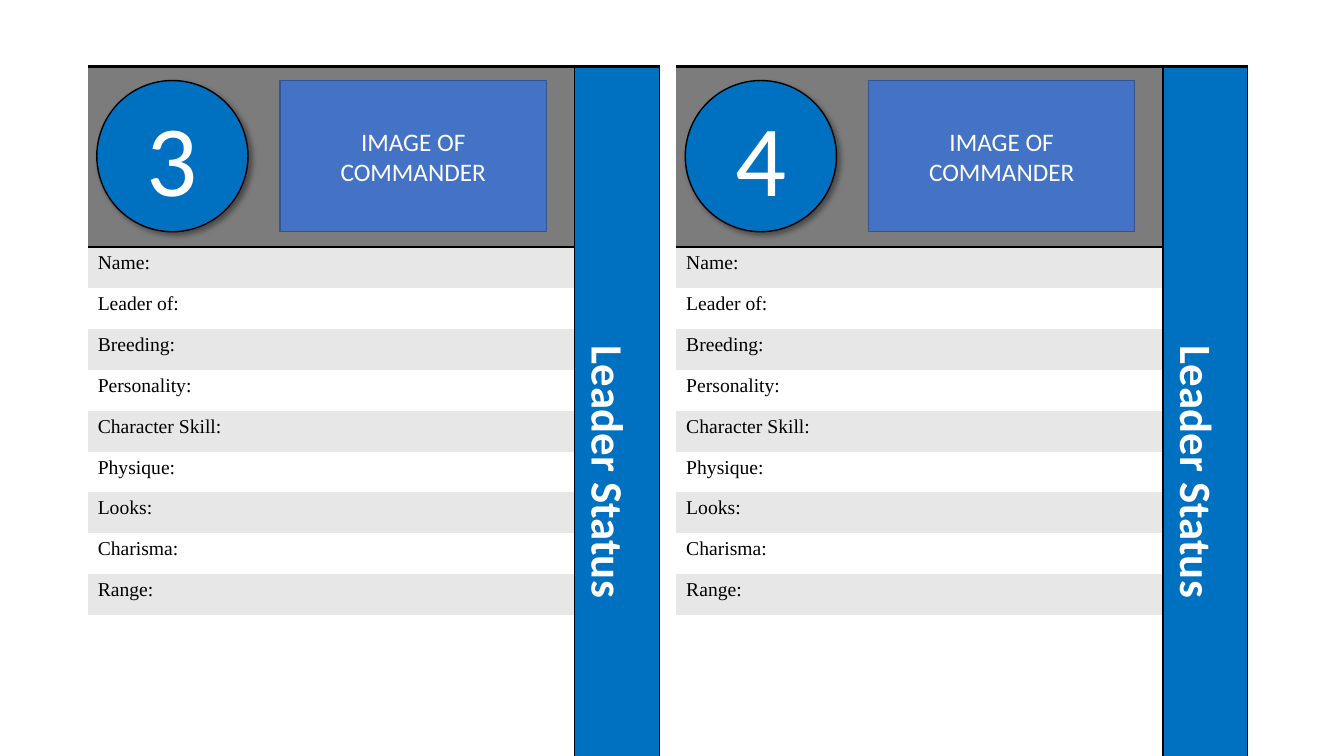
from lxml.etree import SubElement
from pptx import Presentation
from pptx.dml.color import RGBColor
from pptx.enum.shapes import MSO_SHAPE as SHAPE
from pptx.enum.text import MSO_ANCHOR as ANCHOR, PP_ALIGN as ALIGN
from pptx.oxml.ns import qn
from pptx.util import Cm, Pt

COLORS = {
    "black": "000000", "white": "FFFFFF", "band": "E7E7E7", "header": "7C7C7C",
    "status": "0070C0", "image": "4472C4", "image_line": "325491",
}
TRAITS = ["Name:", "Leader of:", "Breeding:", "Personality:", "Character Skill:",
          "Physique:", "Looks:", "Charisma:", "Range:"]
LAST_ROW = len(TRAITS) + 1
COL_WIDTHS = [4.19, 8.08, 2.13]
HEADER_HEIGHT, ROW_HEIGHT = 4.55, 1.03
CARD_LEFT, CARD_TOP, CARD_PITCH = 2.21, 1.68, 14.83
BADGE_TOP, BADGE_SIZE = 2.03, 3.81
NO_STYLE = "{2D5ABB26-0587-4C30-8999-92F81FD0307C}"

TRAIT_FONT = {"name": "Times New Roman", "size": Pt(14), "bold": False}
STATUS_FONT = {"name": "Calibri", "size": Pt(32), "bold": True}
NUMBER_FONT = {"name": "Calibri", "size": Pt(72)}
IMAGE_FONT = {"name": "Calibri", "size": Pt(18)}


def rgb(name):
    return RGBColor.from_string(COLORS[name])


def paint(item, color):
    item.fill.solid()
    item.fill.fore_color.rgb = rgb(color)


def write(tf, text, font, color, align=ALIGN.LEFT):
    p = tf.paragraphs[0]
    p.alignment = align
    r = p.add_run()
    r.text = text
    for key, value in font.items():
        setattr(r.font, key, value)
    r.font.color.rgb = rgb(color)


def add_border(cell, side, points):
    ln = SubElement(cell._tc.get_or_add_tcPr(), qn(f"a:ln{side}"), w=str(Pt(points)))
    fill = SubElement(ln, qn("a:solidFill"))
    SubElement(fill, qn("a:srgbClr"), val=COLORS["black"])


def frame_cell(cell, row, col):
    """Rule the card's top, its header, its foot and the edge of the status bar."""
    if col == 2:
        add_border(cell, "L", 1)
    if col == 1:
        add_border(cell, "R", 1)
    if row == 0:
        add_border(cell, "T", 2)
    if row == LAST_ROW or (row == 0 and col < 2):
        add_border(cell, "B", 2)


def cell_color(row, col):
    if col == 2:
        return "status"
    if row == 0:
        return "header"
    return "band" if row % 2 and row < LAST_ROW else "white"


def add_card_table(s, left):
    height = HEADER_HEIGHT + LAST_ROW * ROW_HEIGHT
    frame = s.shapes.add_table(LAST_ROW + 1, len(COL_WIDTHS), Cm(left), Cm(CARD_TOP),
                               Cm(sum(COL_WIDTHS)), Cm(height))
    table = frame.table
    table.first_row = table.horz_banding = False
    table._tbl.tblPr.find(qn("a:tableStyleId")).text = NO_STYLE
    for column, width in zip(table.columns, COL_WIDTHS):
        column.width = Cm(width)
    for i, row in enumerate(table.rows):
        row.height = Cm(ROW_HEIGHT if i else HEADER_HEIGHT)
        for j, cell in enumerate(row.cells):
            frame_cell(cell, i, j)
            paint(cell, cell_color(i, j))
    for i, trait in enumerate(TRAITS, 1):
        write(table.cell(i, 0).text_frame, trait, TRAIT_FONT, "black")
    for i in (0, LAST_ROW):
        table.cell(i, 0).merge(table.cell(i, 1))
    status = table.cell(0, 2)
    status.merge(table.cell(LAST_ROW, 2))
    status.vertical_anchor = ANCHOR.MIDDLE
    status._tc.get_or_add_tcPr().set("vert", "vert")
    write(status.text_frame, "Leader Status", STATUS_FONT, "white", ALIGN.CENTER)


def add_badge(s, kind, left, width, text, font, fill, line):
    sp = s.shapes.add_shape(kind, Cm(left), Cm(BADGE_TOP), Cm(width), Cm(BADGE_SIZE))
    sp.shadow.inherit = False
    paint(sp, fill)
    sp.line.color.rgb = rgb(line)
    sp.line.width = Pt(1)
    tf = sp.text_frame
    tf.word_wrap = True
    tf.vertical_anchor = ANCHOR.MIDDLE
    write(tf, text, font, "white", ALIGN.CENTER)
    return sp


def add_drop_shadow(sp):
    effects = sp._element.spPr.find(qn("a:effectLst"))
    shadow = SubElement(effects, qn("a:outerShdw"), blurRad=str(Pt(4)), dist=str(Pt(3)),
                        dir=str(45 * 60000), algn="tl", rotWithShape="0")
    color = SubElement(shadow, qn("a:srgbClr"), val=COLORS["black"])
    SubElement(color, qn("a:alpha"), val="40000")


def add_card(s, left, number):
    add_card_table(s, left)
    circle = add_badge(s, SHAPE.OVAL, left + 0.23, BADGE_SIZE, number, NUMBER_FONT,
                       "status", "black")
    add_drop_shadow(circle)
    add_badge(s, SHAPE.RECTANGLE, left + 4.85, 6.71, "IMAGE OF COMMANDER", IMAGE_FONT,
              "image", "image_line")


def main():
    prs = Presentation()
    prs.slide_width, prs.slide_height = Cm(33.87), Cm(19.05)
    s = prs.slides.add_slide(prs.slide_layouts[6])
    for i, number in enumerate("34"):
        add_card(s, CARD_LEFT + i * CARD_PITCH, number)
    prs.save("out.pptx")


if __name__ == "__main__":
    main()
